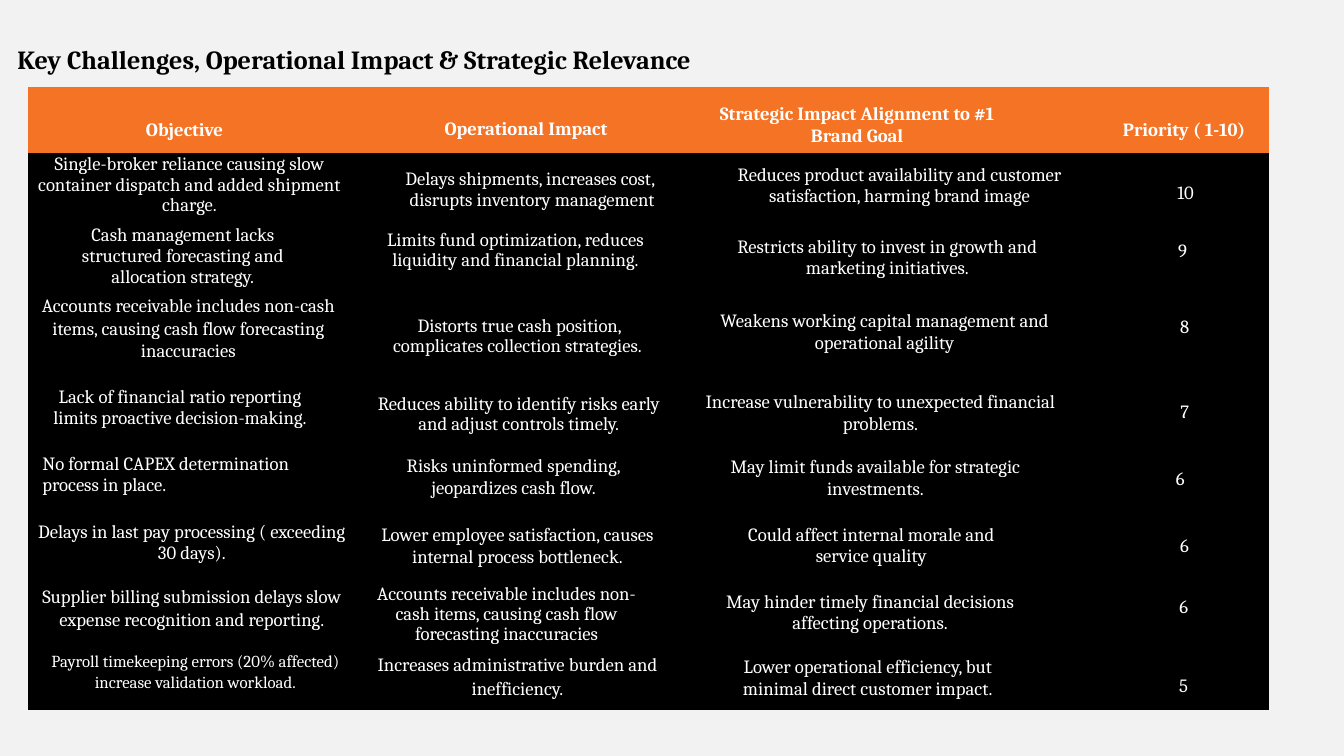
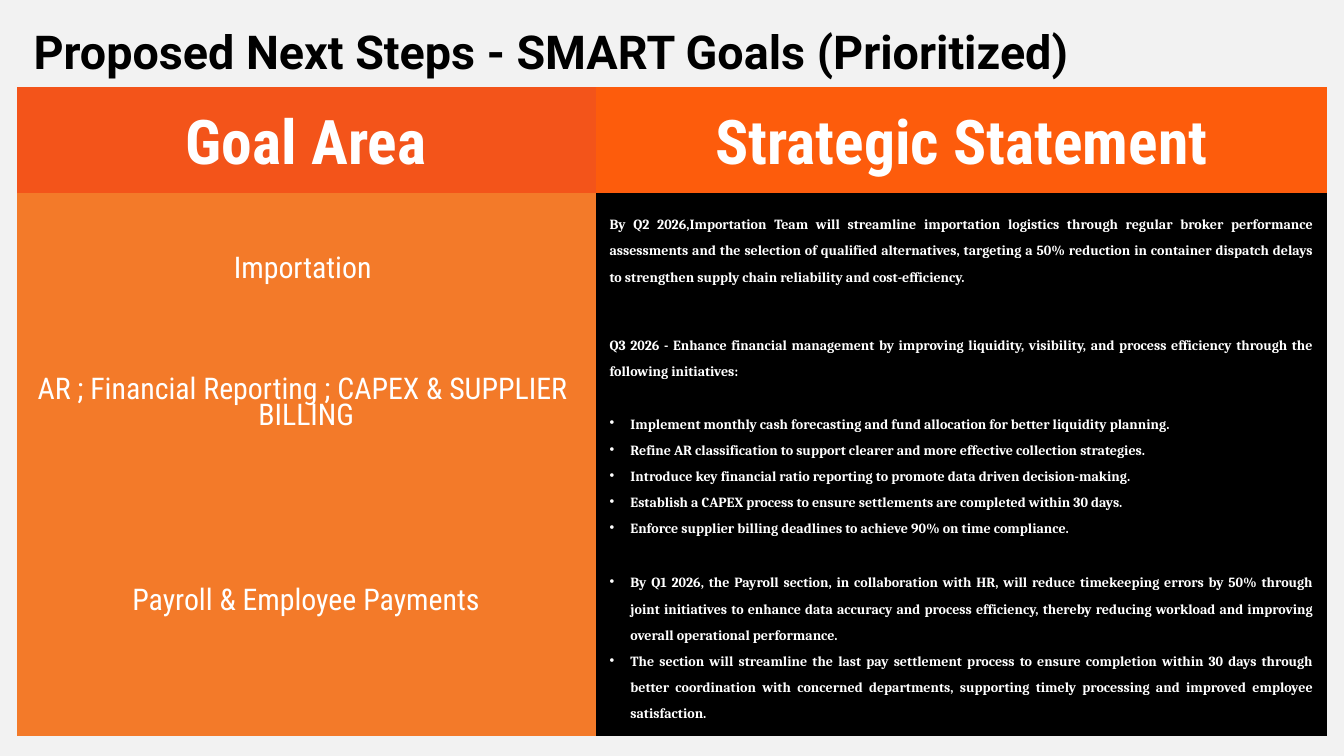
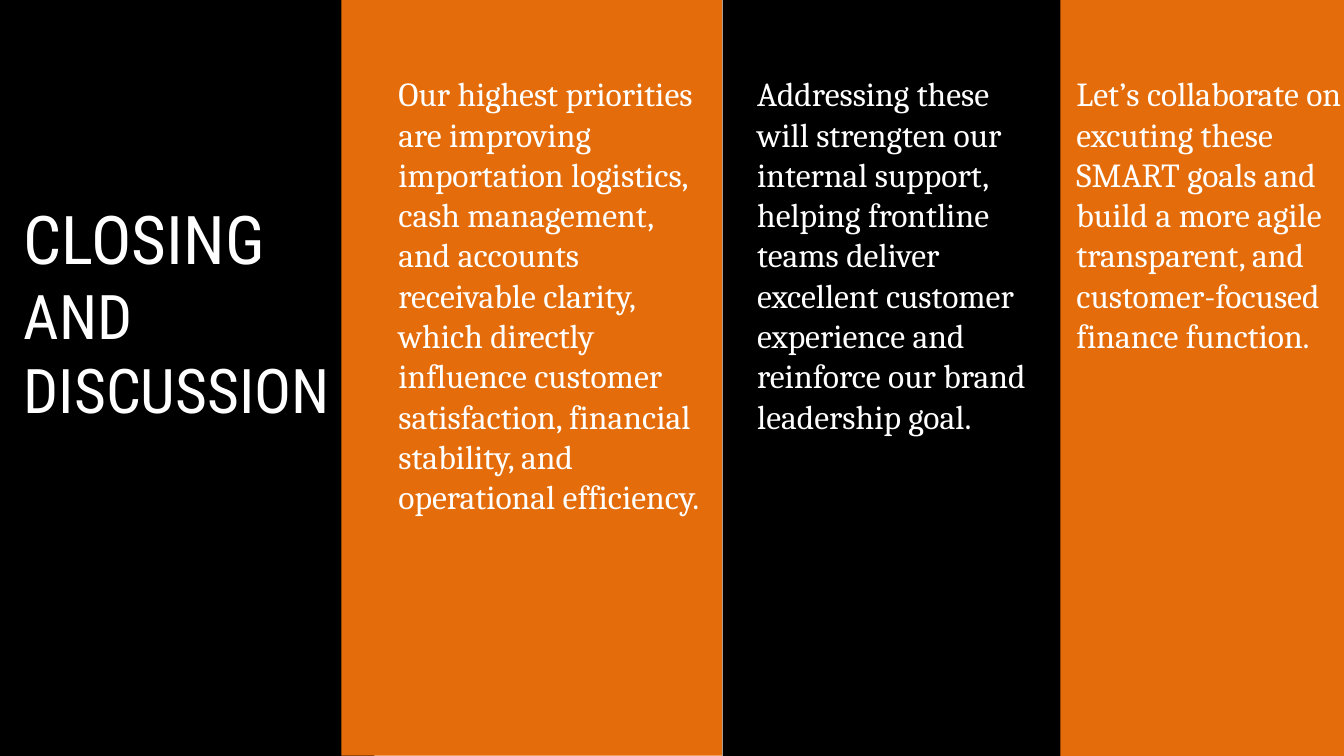
from lxml import etree
from pptx import Presentation
from pptx.dml.color import RGBColor
from pptx.enum.shapes import MSO_SHAPE
from pptx.enum.text import MSO_ANCHOR, MSO_AUTO_SIZE, PP_ALIGN
from pptx.oxml.ns import qn
from pptx.util import Cm, Pt

LEFT, MID, FULL = PP_ALIGN.LEFT, PP_ALIGN.CENTER, PP_ALIGN.JUSTIFY
TOP, FIXED, RECT = MSO_ANCHOR.TOP, MSO_AUTO_SIZE.NONE, MSO_SHAPE.RECTANGLE

BLACK = RGBColor(0x00, 0x00, 0x00)
WHITE = RGBColor(0xFF, 0xFF, 0xFF)
PALE = RGBColor(0xF2, 0xF2, 0xF2)
AMBER = RGBColor(0xF5, 0x73, 0x25)
RED = RGBColor(0xF3, 0x54, 0x1A)
FLAME = RGBColor(0xFD, 0x5C, 0x0C)
PEACH = RGBColor(0xF3, 0x7A, 0x29)
RUST = RGBColor(0xE4, 0x6C, 0x0A)

SERIF, SANS, SLIM = "Cambria", "Roboto", "Roboto Condensed"
PLAIN = "{2D5ABB26-0587-4C30-8999-92F81FD0307C}"  # table style without grid
PAD = Cm(0.53)
HANG = Cm(0.79)

# Challenge table: each note is (dx, dy, width, lines, spacing, text[, size]),
# placed from the corner of its cell
GRID = (1.07, 3.28)
COLS = [12.62, 12.47, 15.65, 6.17]
ROWS = [2.51, 2.54, 2.51, 3.53, 2.29, 2.64, 2.51, 2.51, 2.51]
CAPEX = "No formal CAPEX determination process in place."
NOTES = [
    [(2.54, 0.84, 6.73, 1, 33.6, "Objective"),
     (1.98, 0.79, 8.43, 1, 33.6, "Operational Impact"),
     (0.51, 0.58, 11.46, 2, 23.8,
      "Strategic Impact Alignment to #1 Brand Goal"),
     (-1.04, 0.84, 7.98, 1, 33.6, "Priority ( 1-10)")],
    [(0.3, 0.03, 11.58, 3, 21.9, "Single-broker reliance causing slow "
      "container dispatch and added shipment charge."),
     (-0.28, 0.56, 13.41, 3, 22.5, "Delays shipments, increases cost, \n"
      "disrupts inventory management"),
     (1.14, 0.43, 13.41, 2, 22.4, "Reduces product availability and customer\n"
      "satisfaction, harming brand image"),
     (0.53, 0.86, 4.95, 1, 28.9, "10")],
    [(1.04, 0.15, 9.6, 3, 22.4, "Cash management lacks structured "
      "forecasting and allocation strategy."),
     (0.08, 0.33, 11.43, 2, 22.2, "Limits fund optimization, reduces "
      "liquidity and financial planning."),
     (0.51, 0.64, 13.74, 2, 21.9, "Restricts ability to invest in growth "
      "and marketing initiatives."),
     (0.86, 0.53, 4.06, 1, 28.9, "9")],
    [(0.41, 0.28, 11.28, 3, 24.1, "Accounts receivable includes non-cash "
      "items, causing cash flow forecasting inaccuracies"),
     (0.23, 1.12, 11.28, 2, 21.3, " Distorts true cash position, "
      "complicates collection strategies."),
     (0.94, 0.86, 12.67, 2, 23.2, "Weakens working capital management and "
      "operational agility"),
     (0.74, 0.89, 4.45, 1, 28.9, "8")],
    [(0.64, 0.23, 10.19, 2, 22.7, "Lack of financial ratio reporting limits "
      "proactive decision-making."),
     (0.28, 0.53, 11.28, 2, 21.3, "Reduces ability to identify risks early "
      "and adjust controls timely."),
     (0.3, 0.41, 13.64, 2, 23.2, "Increase vulnerability to unexpected "
      "financial problems."),
     (0.86, 0.56, 4.22, 1, 28.9, "7")],
    [None,
     (0.08, 0.48, 11.28, 2, 24.1, "Risks uninformed spending, "
      "jeopardizes cash flow."),
     (1.14, 0.58, 11.58, 2, 23.2, "May limit funds available for "
      "strategic investments."),
     (0.3, 0.81, 5, 1, 28.9, "6")],
    [(0.2, 0.41, 11.96, 2, 22.7, "Delays in last pay processing "
      "( exceeding 30 days)."),
     (0.23, 0.46, 11.28, 2, 24.1, "Lower employee satisfaction, causes "
      "internal process bottleneck."),
     (1.35, 0.48, 10.85, 2, 23.2, "Could affect internal morale and "
      "service quality"),
     (1.17, 0.71, 3.58, 1, 28.9, "6")],
    [(0.2, 0.3, 11.96, 2, 24.1, "Supplier billing submission delays slow "
      "expense recognition and reporting."),
     (0.28, 0.3, 10.36, 3, 21.3, "Accounts receivable includes non-cash "
      "items, causing cash flow forecasting inaccuracies"),
     (0.94, 0.51, 11.58, 2, 23.2, "May hinder timely financial decisions "
      "affecting operations."),
     (0.94, 0.51, 3.99, 1, 28.9, "6")],
    [(0.64, 0.28, 11.35, 2, 21.8, "Payroll timekeeping errors "
      "(20% affected) increase validation workload.", 18),
     (0.23, 0.3, 11.28, 2, 25.5, "Increases administrative burden and "
      "inefficiency."),
     (1.3, 0.46, 10.69, 2, 23.2, "Lower operational efficiency, but minimal "
      "direct customer impact."),
     (0.53, 0.97, 4.8, 1, 28.9, "5")],
]

# Goal table: (top margin, area lines, intro, bullets)
HEADS = [("Goal Area", RED), ("Strategic Statement", FLAME)]
GOALS = [
    (2.51, ["Importation "],
     "By Q2 2026,Importation Team will streamline importation logistics "
     "through regular broker performance assessments and the selection of "
     "qualified alternatives, targeting a 50% reduction in container dispatch "
     "delays to strengthen supply chain reliability and cost-efficiency.", []),
    (2.51, ["AR ; Financial Reporting ; CAPEX & SUPPLIER ", "BILLING"],
     "Q3 2026 - Enhance financial management by improving liquidity, "
     "visibility, and process efficiency through the following initiatives:",
     ["Implement monthly cash forecasting and fund allocation for better "
      "liquidity planning.",
      "Refine AR classification to support clearer and more effective "
      "collection strategies.",
      "Introduce key financial ratio reporting to promote data driven "
      "decision-making.",
      "Establish a CAPEX process to ensure settlements are completed within "
      "30 days.",
      "Enforce supplier billing deadlines to achieve 90% on time "
      "compliance."]),
    (1.52, ["Payroll & Employee Payments"], None,
     ["By Q1 2026, the Payroll section, in collaboration with HR, will reduce "
      "timekeeping errors by 50% through joint initiatives to enhance data "
      "accuracy and process efficiency, thereby reducing workload and "
      "improving overall operational performance. ",
      "The section will streamline the last pay settlement process to ensure "
      "completion within 30 days through better coordination with concerned "
      "departments, supporting timely processing and improved employee "
      "satisfaction."]),
]

# Closing bands: (box, fill, text inset, text width, text height, text)
BANDS = [
    ((27.31, -0.53, 12.98, 29.46), BLACK, 1.06, 10.87, 17.17,
     "Addressing these will strengten our internal support, helping "
     "frontline teams deliver excellent customer experience and reinforce "
     "our brand leadership goal."),
    ((40.08, -0.1, 11.81, 29.13), RUST, 0.36, 10.87, 12.57,
     "Let’s collaborate on excuting these SMART goals and build a more agile "
     "transparent, and customer-focused finance function."),
    ((-0.94, -1.09, 15.09, 29.82), BLACK, 0, 0, 0, None),
    ((12.9, -0.89, 14.4, 29.46), RUST, 1.91, 12.14, 21.79,
     "Our highest priorities are improving importation logistics, cash "
     "management, and accounts receivable clarity, which directly influence "
     "customer satisfaction, financial stability, and operational "
     "efficiency."),
]
CREST = 2.64  # top of the band texts


# Shared helpers
def write(frame, text, size, font=SERIF, ink=WHITE, bold=False, align=LEFT,
          lead=None):
    """Fill the empty first paragraph, or add one after it."""
    para = frame.paragraphs[-1]
    if para.runs:
        para = frame.add_paragraph()
    para.alignment = align
    if lead:
        para.line_spacing = Pt(lead)
    run = para.add_run()
    run.text = text
    face = run.font
    face.name, face.size, face.bold = font, Pt(size), bold
    face.color.rgb = ink
    return para


def bullet(para):
    props = para._p.get_or_add_pPr()
    props.set("marL", str(HANG))
    props.set("indent", str(-HANG))
    etree.SubElement(props, qn("a:buChar")).set("char", "•")


def bare(frame):
    frame.margin_left = frame.margin_right = 0
    frame.margin_top = frame.margin_bottom = 0


def place(slide, box):
    """Move the title to the box, in front of what is drawn so far."""
    title = slide.shapes.title
    title.left, title.top, title.width, title.height = map(Cm, box)
    slide.shapes._spTree.append(title._element)
    frame = title.text_frame
    frame.auto_size, frame.vertical_anchor = FIXED, TOP
    frame.word_wrap = True
    return frame


def text_box(slide, x, y, wide, high):
    frame = slide.shapes.add_textbox(Cm(x), Cm(y), Cm(wide), high).text_frame
    frame.word_wrap = True
    return frame


def start(deck, back=None):
    slide = deck.slides.add_slide(deck.slide_layouts[5])
    if back is not None:
        slide.background.fill.solid()
        slide.background.fill.fore_color.rgb = back
    return slide


def headline(slide, box, text, size, font, lead):
    frame = place(slide, box)
    bare(frame)
    write(frame, text, size, font, BLACK, True, lead=lead)


def add_grid(slide, spot, cols, rows):
    x, y = spot
    table = slide.shapes.add_table(
        len(rows), len(cols), Cm(x), Cm(y), Cm(sum(cols)),
        Cm(sum(rows))).table
    table.first_row = table.horz_banding = False
    table._tbl.tblPr.find(qn("a:tableStyleId")).text = PLAIN
    for col, wide in zip(table.columns, cols):
        col.width = Cm(wide)
    for row, high in zip(table.rows, rows):
        row.height = Cm(high)
    return table


def paint(cell, fill):
    cell.fill.solid()
    cell.fill.fore_color.rgb = fill


def inset(cell, top=PAD):
    cell.margin_left = cell.margin_right = cell.margin_bottom = PAD
    cell.margin_top = top
    return cell.text_frame


# Slide 1: challenges
def add_note(slide, x, y, note, bold):
    dx, dy, wide, lines, lead, text = note[:6]
    size = note[6] if len(note) > 6 else 20
    frame = text_box(slide, x + dx, y + dy, wide, Pt(lines * lead))
    bare(frame)
    for line in text.split("\n"):
        write(frame, line, size, bold=bold, align=MID, lead=lead)


def challenges(deck):
    slide = start(deck, PALE)
    table = add_grid(slide, GRID, COLS, ROWS)
    headline(slide, (0.66, 0.89, 48.44, 1.96),
             "Key Challenges, Operational Impact & Strategic Relevance",
             28, SERIF, 55)
    for r, notes in enumerate(NOTES):
        for c, note in enumerate(notes):
            cell = table.cell(r, c)
            paint(cell, BLACK if r else AMBER)
            if note:
                add_note(slide, GRID[0] + sum(COLS[:c]),
                         GRID[1] + sum(ROWS[:r]), note, r == 0)
            else:
                write(inset(cell), CAPEX, 20, lead=22.4)


# Slide 2: goals
def goals(deck):
    slide = start(deck, PALE)
    headline(slide, (1.27, 0.3, 50.11, 2.69),
             "Proposed Next Steps - SMART Goals (Prioritized)",
             50, SANS, 75.6)
    table = add_grid(slide, (0.64, 3.28), [21.87, 27.66],
                     [4.01, 4.57, 8.97, 6.99])
    for c, (text, fill) in enumerate(HEADS):
        cell = table.cell(0, c)
        paint(cell, fill)
        write(inset(cell, Cm(2.01)), text, 66, SLIM, bold=True, align=MID,
              lead=42)
    for r, (top, area, intro, points) in enumerate(GOALS, 1):
        left, right = table.cell(r, 0), table.cell(r, 1)
        paint(left, PEACH)
        paint(right, BLACK)
        frame = inset(left, Cm(top))
        for line in area:
            write(frame, line, 32, SLIM, align=MID, lead=28)
        frame = inset(right)
        if intro:
            write(frame, intro, 15, bold=True, align=FULL, lead=28)
        for i, point in enumerate(points):
            para = write(frame, point, 15, bold=True, align=FULL, lead=28)
            if intro and i == 0:
                para.space_before = Pt(28)
            bullet(para)


# Slide 3: closing
def add_band(slide, box, fill, dx, wide, high, text):
    band = slide.shapes.add_shape(RECT, *map(Cm, box))
    band.shadow.inherit = False
    band.fill.solid()
    band.fill.fore_color.rgb = fill
    band.line.fill.background()
    if text:
        frame = text_box(slide, box[0] + dx, CREST, wide, Cm(high))
        write(frame, text, 36)


def closing(deck):
    slide = start(deck)
    for band in BANDS:
        add_band(slide, *band)
    frame = place(slide, (0.64, 7.32, 15.82, 8.97))
    write(frame, "CLOSING", 72, SLIM)
    write(frame, "AND DISCUSSION", 66, SLIM)


def main():
    deck = Presentation()
    deck.slide_width, deck.slide_height = Cm(50.8), Cm(28.58)
    challenges(deck)
    goals(deck)
    closing(deck)
    deck.save("out.pptx")


if __name__ == "__main__":
    main()
